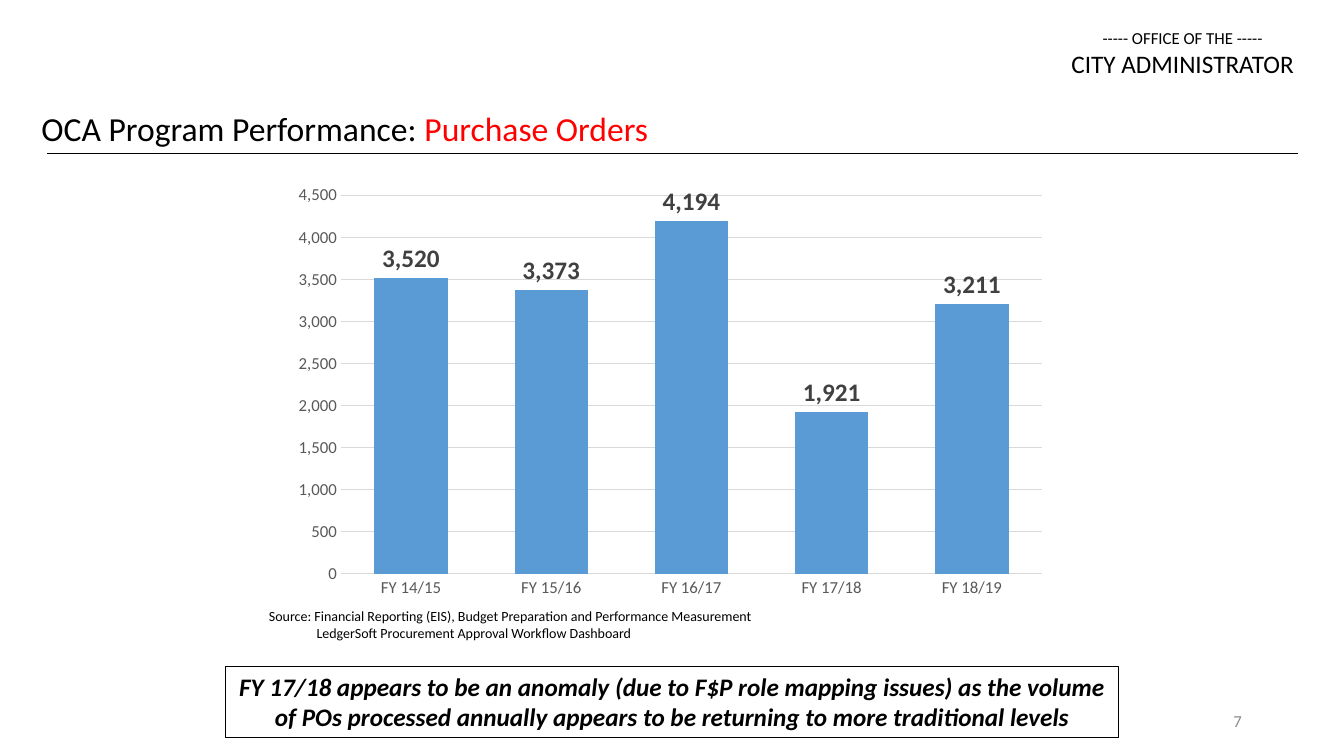
import pptx
import pptx.chart.data
import pptx.dml.color
import pptx.enum.chart
import pptx.enum.shapes
import pptx.enum.text
import pptx.oxml
import pptx.oxml.ns
import pptx.util

Cm, Pt = pptx.util.Cm, pptx.util.Pt
RGB = pptx.dml.color.RGBColor
ALIGN = pptx.enum.text.PP_ALIGN
ANCHOR = pptx.enum.text.MSO_ANCHOR

BLACK = RGB(0, 0, 0)
RED = RGB(0xFF, 0, 0)
BLUE = RGB(0x5B, 0x9B, 0xD5)
DARK = RGB(0x40, 0x40, 0x40)
GREY = RGB(0x59, 0x59, 0x59)
PALE = RGB(0xD9, 0xD9, 0xD9)
MUTED = RGB(0x8C, 0x8C, 0x8C)
FACE = "Calibri"

# Each paragraph is a list of runs: (text, size, colour)
OFFICE = [[("----- OFFICE OF THE -----", 12, BLACK)],
          [("CITY ADMINISTRATOR", 18, BLACK)]]
TITLE = [[("OCA Program Performance: ", 24, BLACK),
          ("Purchase Orders", 24, RED)]]
SOURCE = [[("Source: Financial Reporting (EIS), Budget Preparation and "
            "Performance Measurement", 10, BLACK)],
          [("LedgerSoft Procurement Approval Workflow Dashboard", 10, BLACK)]]
NOTE = [[("FY 17/18 appears to be an anomaly (due to F$P role mapping issues) "
          "as the volume of POs processed annually appears to be returning to "
          "more traditional levels", 18, BLACK)]]
PAGE = [[("7", 12, MUTED)]]
ORDERS = {"FY 14/15": 3520, "FY 15/16": 3373, "FY 16/17": 4194,
          "FY 17/18": 1921, "FY 18/19": 3211}
PLOT = {"x": 0.072, "y": 0.049, "w": 0.907, "h": 0.884}


def style(font, size, color, bold=False):
    font.name, font.size, font.bold = FACE, Pt(size), bold
    font.color.rgb = color


def write(shape, paras, align=ALIGN.LEFT, wrap=False, anchor=ANCHOR.TOP,
          strong=False):
    frame = shape.text_frame
    frame.auto_size = pptx.enum.text.MSO_AUTO_SIZE.NONE
    frame.word_wrap, frame.vertical_anchor = wrap, anchor
    for i, runs in enumerate(paras):
        para = frame.add_paragraph() if i else frame.paragraphs[0]
        para.alignment = align
        for text, size, color in runs:
            run = para.add_run()
            run.text = text
            style(run.font, size, color, strong)
            run.font.italic = strong


def box(slide, place, paras, **look):
    shape = slide.shapes.add_textbox(*map(Cm, place))
    write(shape, paras, **look)
    return shape


def draw_rule(slide):
    rule = slide.shapes.add_connector(
        pptx.enum.shapes.MSO_CONNECTOR.STRAIGHT,
        Cm(1.19), Cm(3.87), Cm(32.72), Cm(3.87))
    rule.line.color.rgb, rule.line.width = BLACK, Pt(0.5)
    props = rule._element.spPr
    props.append(props.makeelement(pptx.oxml.ns.qn("a:effectLst"), {}))


def draw_note(slide):
    note = slide.shapes.add_shape(
        pptx.enum.shapes.MSO_SHAPE.RECTANGLE,
        Cm(5.69), Cm(16.79), Cm(22.5), Cm(1.8))
    note.shadow.inherit = False
    note.fill.background()
    note.line.color.rgb, note.line.width = BLACK, Pt(0.75)
    write(note, NOTE, align=ALIGN.CENTER, wrap=True, strong=True)


def fix_plot(chart):
    """Pin the inner plot area to the fractions in PLOT."""
    area = chart._chartSpace.chart.plotArea
    for old in area.findall(pptx.oxml.ns.qn("c:layout")):
        area.remove(old)
    sizes = "".join(f'<c:{k} val="{v}"/>' for k, v in PLOT.items())
    area.insert(0, pptx.oxml.parse_xml(
        f'<c:layout {pptx.oxml.ns.nsdecls("c")}><c:manualLayout>'
        '<c:layoutTarget val="inner"/><c:xMode val="edge"/>'
        f'<c:yMode val="edge"/>{sizes}</c:manualLayout></c:layout>'))


def draw_chart(slide):
    kinds = pptx.enum.chart
    data = pptx.chart.data.CategoryChartData(number_format="#,##0")
    data.categories = list(ORDERS)
    data.add_series("Series 1", list(ORDERS.values()))
    chart = slide.shapes.add_chart(
        kinds.XL_CHART_TYPE.COLUMN_CLUSTERED,
        Cm(7.19), Cm(4.39), Cm(19.48), Cm(10.8), data).chart
    chart.has_title = chart.has_legend = False
    style(chart.font, 10, BLACK)
    cats, vals = chart.category_axis, chart.value_axis
    for axis in (cats, vals):
        axis.major_tick_mark = kinds.XL_TICK_MARK.NONE
        axis.minor_tick_mark = kinds.XL_TICK_MARK.NONE
        style(axis.tick_labels.font, 12, GREY)
    vals.minimum_scale, vals.maximum_scale, vals.major_unit = 0, 4500, 500
    vals.tick_labels.number_format = "#,##0"
    vals.tick_labels.number_format_is_linked = False
    vals.format.line.fill.background()
    vals.has_major_gridlines = True
    for line in (cats.format.line, vals.major_gridlines.format.line):
        line.color.rgb, line.width = PALE, Pt(0.75)
    plot = chart.plots[0]
    plot.gap_width, plot.overlap, plot.vary_by_categories = 91, -24, False
    bars = plot.series[0]
    bars.format.fill.solid()
    bars.format.fill.fore_color.rgb = BLUE
    tags = bars.data_labels
    tags.show_value = True
    tags.number_format, tags.number_format_is_linked = "#,##0", False
    tags.position = kinds.XL_LABEL_POSITION.OUTSIDE_END
    style(tags.font, 18, DARK, True)
    fix_plot(chart)


def main():
    deck = pptx.Presentation()
    deck.slide_width, deck.slide_height = Cm(33.87), Cm(19.05)
    slide = deck.slides.add_slide(deck.slide_layouts[5])
    title = slide.shapes.title
    title.left, title.top, title.width, title.height = map(
        Cm, (0.79, 2.59, 15.95, 1.27))
    write(title, TITLE)
    box(slide, (26.72, 0.58, 6.17, 1.55), OFFICE, align=ALIGN.CENTER)
    draw_rule(slide)
    draw_chart(slide)
    draw_note(slide)
    source = box(slide, (6.53, 15.19, 12.88, 1.12), SOURCE)
    source.text_frame.paragraphs[1]._p.get_or_add_pPr().set(
        "marL", str(Cm(1.2)))
    box(slide, (23.93, 17.65, 7.62, 1.01), PAGE, align=ALIGN.RIGHT,
        wrap=True, anchor=ANCHOR.MIDDLE)
    deck.save("out.pptx")


if __name__ == "__main__":
    main()
